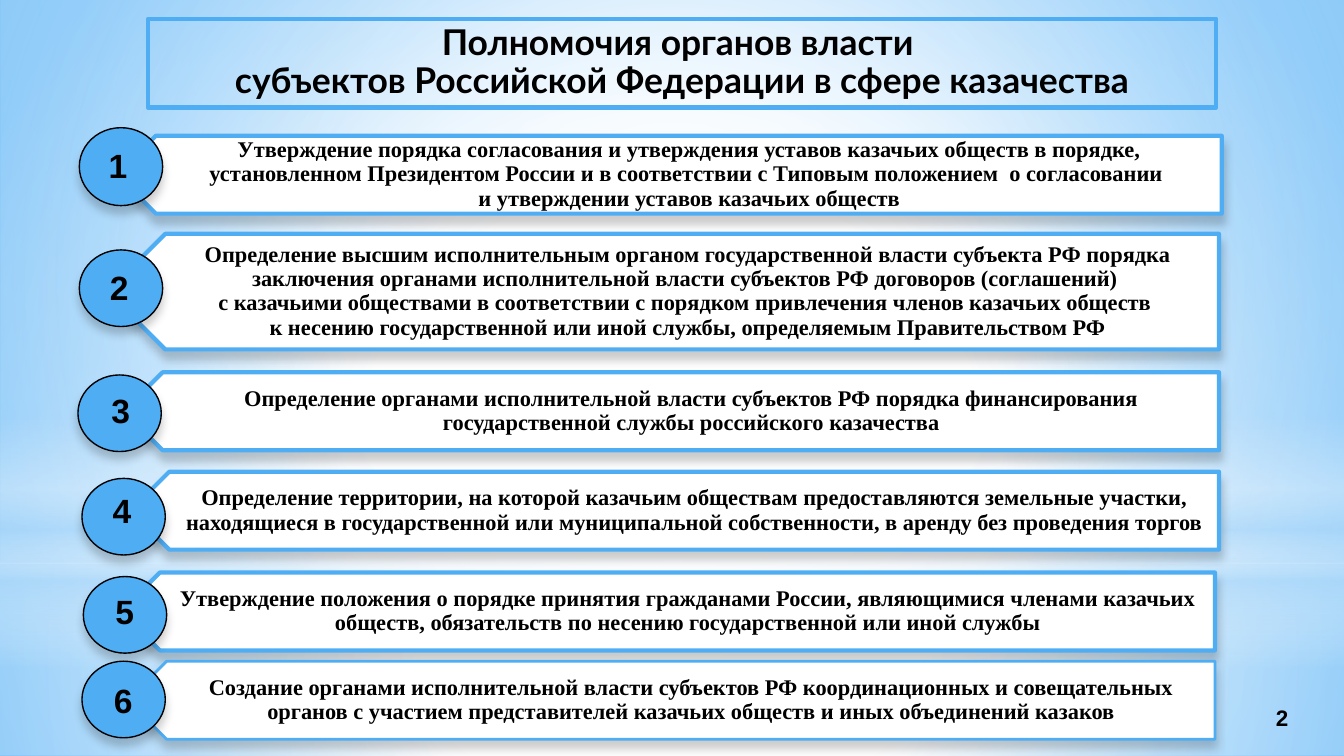
from dataclasses import dataclass
from typing import NamedTuple, Optional

from lxml.etree import SubElement
from pptx import Presentation
from pptx.dml.color import RGBColor
from pptx.enum.shapes import MSO_SHAPE
from pptx.enum.text import MSO_ANCHOR, MSO_AUTO_SIZE, PP_ALIGN
from pptx.oxml import parse_xml
from pptx.oxml.ns import nsdecls, qn
from pptx.util import Inches, Pt

COLS, ROWS = 100, 56.25


@dataclass(frozen=True)
class Theme:
    white: str = "FFFFFF"
    pale: str = "B4DCFA"
    deep: str = "008BF4"
    accent: str = "4FADF3"
    ink: str = "000000"
    title_font: str = "Lato"
    body_font: str = "Times New Roman"
    number_font: str = "Arial"
    title_size: float = 19
    title_leading: float = 20
    body_size: float = 12
    number_size: float = 18


class Box(NamedTuple):
    x: float
    y: float
    w: float
    h: float


class Stop(NamedTuple):
    pos: int
    color: str
    alpha: int = 100


class Backdrop(NamedTuple):
    kind: MSO_SHAPE
    box: Box
    stops: list[Stop]
    centre: Optional[tuple[int, int, int, int]] = (50, 50, 50, 50)


class Power(NamedTuple):
    bar: Box
    badge: Box
    number: Box
    lines: list[str]
    inset: float = 3.9
    line_width: float = 2.25


T = Theme()
prs = Presentation()
prs.slide_width, prs.slide_height = Inches(10), Inches(5.625)


def cx(cols: float) -> int:
    return round(prs.slide_width * cols / COLS)


def cy(rows: float) -> int:
    return round(prs.slide_height * rows / ROWS)


def place(box: Box) -> tuple[int, int, int, int]:
    return cx(box.x), cy(box.y), cx(box.w), cy(box.h)


def set_gradient(parent, stops: list[Stop], centre) -> None:
    gs = "".join(
        f'<a:gs pos="{p * 1000}"><a:srgbClr val="{c}"><a:alpha val="{a * 1000}"/></a:srgbClr></a:gs>'
        for p, c, a in stops)
    if centre:
        l, t, r, b = (v * 1000 for v in centre)
        shade = f'<a:path path="circle"><a:fillToRect l="{l}" t="{t}" r="{r}" b="{b}"/></a:path>'
    else:
        shade = '<a:lin ang="5400000" scaled="0"/>'
    grad = parse_xml(f'<a:gradFill {nsdecls("a")} rotWithShape="1"><a:gsLst>{gs}</a:gsLst>{shade}</a:gradFill>')
    parent.replace(parent.find(qn("a:solidFill")), grad)


def paint(sp, fill: str, line: str, width: float) -> None:
    sp.fill.solid()
    sp.fill.fore_color.rgb = RGBColor.from_string(fill)
    sp.line.color.rgb = RGBColor.from_string(line)
    sp.line.width = Pt(width)


def add_shadow(sp) -> None:
    sp.shadow.inherit = False
    effects = sp._element.spPr.find(qn("a:effectLst"))
    shadow = SubElement(effects, qn("a:outerShdw"), blurRad=str(Pt(5)), dist=str(Pt(4)),
                        dir="5400000", algn="t", rotWithShape="0")
    color = SubElement(shadow, qn("a:srgbClr"), val=T.ink)
    SubElement(color, qn("a:alpha"), val="20000")


def write(sp, lines: list[str], font: str, size: float, align=PP_ALIGN.CENTER,
          anchor=MSO_ANCHOR.MIDDLE, leading=None) -> None:
    tf = sp.text_frame
    tf.word_wrap = True
    tf.auto_size = MSO_AUTO_SIZE.NONE
    tf.vertical_anchor = anchor
    p = tf.paragraphs[0]
    p.alignment = align
    p.line_spacing = leading
    for i, line in enumerate(lines):
        if i:
            p.add_line_break()
        r = p.add_run()
        r.text = line
        r.font.name, r.font.size, r.font.bold = font, Pt(size), True
        r.font.color.rgb = RGBColor.from_string(T.ink)


def add_backdrop(s, item: Backdrop) -> None:
    sp = s.shapes.add_shape(item.kind, *place(item.box))
    sp.shadow.inherit = False
    sp.line.fill.background()
    sp.fill.solid()
    set_gradient(sp._element.spPr, item.stops, item.centre)
    s.shapes.title._element.addprevious(sp._element)


def add_bar(s, power: Power) -> None:
    x, y, w, h = power.bar
    shoulder, right, middle, bottom = x + h / 2, x + w, y + h / 2, y + h
    fb = s.shapes.build_freeform(cx(right), cy(bottom))
    fb.add_line_segments([(cx(shoulder), cy(bottom)), (cx(x), cy(middle)),
                          (cx(shoulder), cy(y)), (cx(right), cy(y))])
    sp = fb.convert_to_shape()
    paint(sp, T.white, T.accent, power.line_width)
    add_shadow(sp)
    write(sp, power.lines, T.body_font, T.body_size, leading=0.9)
    tf = sp.text_frame
    tf.margin_left, tf.margin_right = cx(power.inset), cx(0.9)
    tf.margin_top = tf.margin_bottom = cy(0.5)


def add_badge(s, power: Power, number: int) -> None:
    sp = s.shapes.add_shape(MSO_SHAPE.OVAL, *place(power.badge))
    paint(sp, T.accent, T.ink, 0.75)
    add_shadow(sp)
    label = s.shapes.add_textbox(*place(power.number))
    write(label, [str(number)], T.number_font, T.number_size, PP_ALIGN.LEFT, MSO_ANCHOR.TOP)


BACKDROPS = [
    Backdrop(MSO_SHAPE.RECTANGLE, Box(0, 41.9, 100, 14.35),
             [Stop(0, T.white, 91), Stop(37, T.white, 76), Stop(100, T.pale, 79)]),
    Backdrop(MSO_SHAPE.RECTANGLE, Box(0, 0, 100, 41.9),
             [Stop(0, T.white, 89), Stop(48, T.white, 62), Stop(100, T.pale, 79)]),
    Backdrop(MSO_SHAPE.RECTANGLE, Box(0, 30.9, 100, 18.8),
             [Stop(0, T.white, 0), Stop(29, T.white, 30), Stop(45, T.pale, 40),
              Stop(55, T.white, 26), Stop(65, T.pale, 60), Stop(100, T.white, 0)], None),
    Backdrop(MSO_SHAPE.OVAL, Box(0, 13.1, 100, 41.9), [Stop(0, T.white), Stop(56, T.white, 0)]),
]

POWERS = [
    Power(Box(8.7, 10.1, 82.2, 5.8), Box(5.9, 9.5, 6.2, 5.8), Box(7.1, 10.3, 3.9, 4),
          ["Утверждение порядка согласования и утверждения уставов казачьих обществ в порядке, "
           "установленном Президентом России и в соответствии с Типовым положением  о согласовании ",
           "и утверждении уставов казачьих обществ"]),
    Power(Box(8, 17.4, 82.7, 8.6), Box(5.9, 18.6, 6.2, 5.7), Box(7.2, 19.4, 3.7, 4),
          ["Определение высшим исполнительным органом государственной власти субъекта РФ порядка "
           "заключения органами исполнительной власти субъектов РФ договоров (соглашений) ",
           "с казачьими обществами в соответствии с порядком привлечения членов казачьих обществ ",
           "к несению государственной или иной службы, определяемым Правительством РФ"], inset=4.6),
    Power(Box(9.2, 27.7, 81.5, 5.8), Box(5.8, 27.9, 6.2, 5.7), Box(7.3, 28.5, 5.1, 4),
          ["Определение органами исполнительной власти субъектов РФ порядка финансирования "
           "государственной службы российского казачества"]),
    Power(Box(9.7, 35.1, 81, 5.8), Box(6.1, 35.6, 6.2, 5.7), Box(7.4, 36, 4.7, 4),
          ["Определение территории, на которой казачьим обществам предоставляются земельные участки, "
           "находящиеся в государственной или муниципальной собственности, в аренду без проведения торгов"]),
    Power(Box(9, 42.6, 81.4, 5.8), Box(6.2, 42.9, 6.2, 5.7), Box(7.6, 43.5, 3.6, 4),
          ["Утверждение положения о порядке принятия гражданами России, являющимися членами казачьих "
           "обществ, обязательств по несению государственной или иной службы"]),
    Power(Box(9.5, 49.2, 80.9, 5.8), Box(6.1, 49.2, 6.2, 5.7), Box(7.5, 50.1, 4.7, 4),
          ["Создание органами исполнительной власти субъектов РФ координационных и совещательных "
           "органов с участием представителей казачьих обществ и иных объединений казаков"],
          line_width=1.5),
]


def main() -> None:
    s = prs.slides.add_slide(prs.slide_layouts[5])
    s.background.fill.solid()
    set_gradient(s._element.cSld.bg.bgPr,
                 [Stop(0, T.white), Stop(42, T.white), Stop(100, T.deep)], (24, 44, 24, 12))
    for item in BACKDROPS:
        add_backdrop(s, item)
    for power in POWERS:
        add_bar(s, power)
    for number, power in enumerate(POWERS, 1):
        add_badge(s, power, number)

    title = s.shapes.title
    title.left, title.top, title.width, title.height = place(Box(11, 1.4, 79.5, 6.6))
    title.line.color.rgb = RGBColor.from_string(T.accent)
    title.line.width = Pt(2.25)
    write(title, ["Полномочия органов власти ", "субъектов Российской Федерации в сфере казачества"],
          T.title_font, T.title_size, anchor=MSO_ANCHOR.TOP, leading=Pt(T.title_leading))

    page = s.shapes.add_textbox(*place(Box(85.4, 51.9, 20, 3)))
    write(page, ["2"], T.number_font, T.body_size)
    prs.save("out.pptx")


if __name__ == "__main__":
    main()
